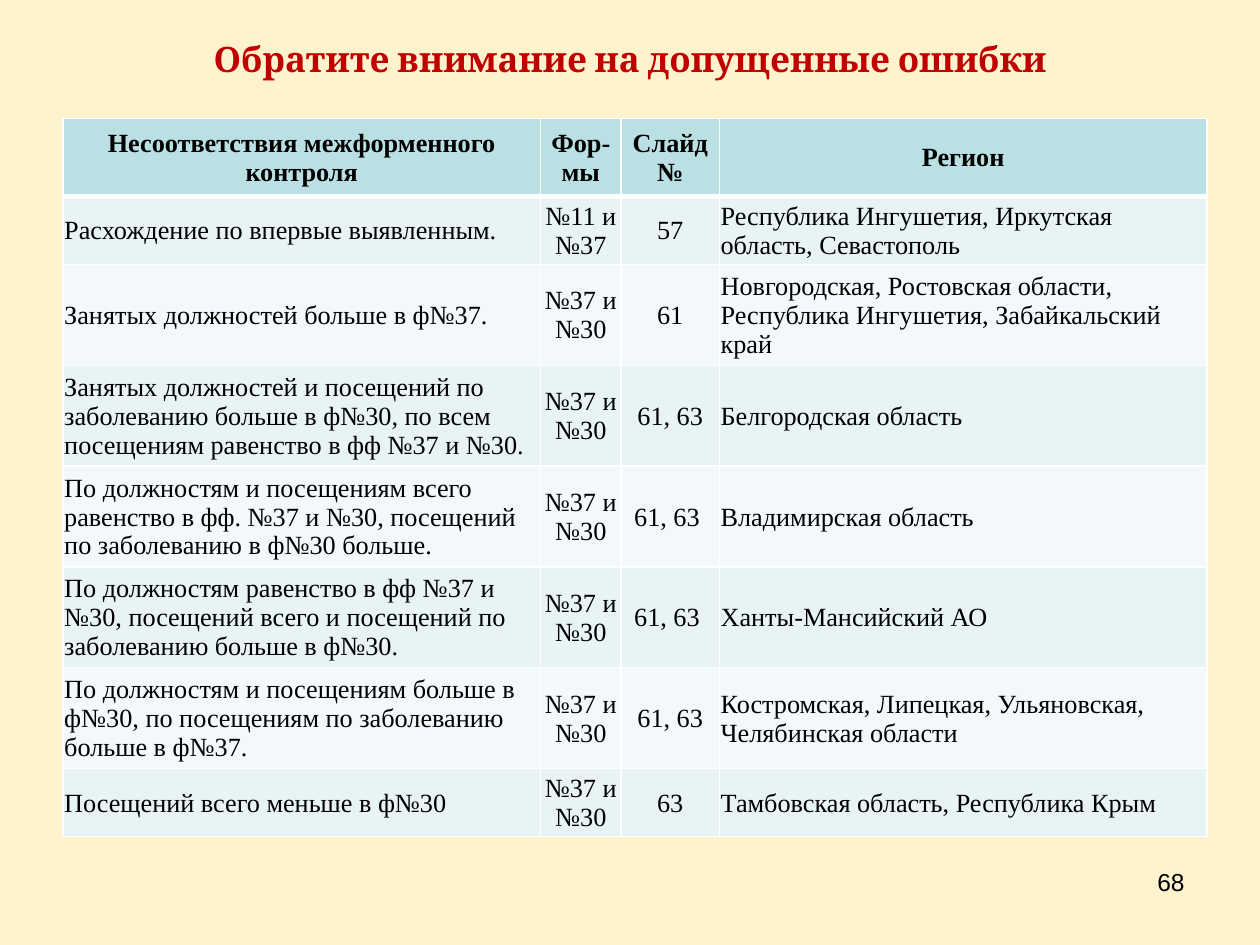
from dataclasses import dataclass

from lxml import etree
from pptx import Presentation
from pptx.dml.color import RGBColor
from pptx.enum.text import MSO_ANCHOR, PP_ALIGN
from pptx.oxml.ns import qn
from pptx.util import Inches, Pt

LEFT, CENTER, RIGHT = PP_ALIGN.LEFT, PP_ALIGN.CENTER, PP_ALIGN.RIGHT
MIDDLE = MSO_ANCHOR.MIDDLE


@dataclass(frozen=True)
class Theme:
    background: str = "FFF3CD"
    title: str = "C00000"
    text: str = "000000"
    header: str = "BBE0E3"
    bands: tuple = ("E7F3F4", "F3F9FA")
    border: str = "FFFFFF"
    title_size: int = 20
    table_size: int = 15
    number_size: int = 14
    title_font: str = "Cambria"
    table_font: str = "Times New Roman"
    number_font: str = "Arial"


THEME = Theme()


def write(frame, text, font, size, color, align, bold=False):
    para = frame.paragraphs[0]
    para.alignment = align
    span = para.add_run()
    span.text = text
    span.font.name = font
    span.font.size = Pt(size)
    span.font.bold = bold
    span.font.color.rgb = RGBColor.from_string(color)


def set_borders(cell, color, bottom_width):
    properties = cell._tc.get_or_add_tcPr()
    widths = {"a:lnL": 1, "a:lnR": 1, "a:lnT": 1, "a:lnB": bottom_width}
    for position, (tag, width) in enumerate(widths.items()):
        line = etree.Element(qn(tag), w=str(Pt(width)))
        fill = etree.SubElement(line, qn("a:solidFill"))
        etree.SubElement(fill, qn("a:srgbClr"), val=color)
        properties.insert(position, line)


# Slide and background
deck = Presentation()
deck.slide_width, deck.slide_height = Inches(10), Inches(7.5)
page = deck.slides.add_slide(deck.slide_layouts[5])
page.background.fill.solid()
page.background.fill.fore_color.rgb = RGBColor.from_string(THEME.background)

# Title
title = page.shapes.title
title.left, title.top = Inches(0.5), Inches(0.23)
title.width, title.height = Inches(9), Inches(0.47)
title.text_frame.vertical_anchor = MIDDLE
write(title.text_frame, "Обратите внимание на допущенные ошибки",
      THEME.title_font, THEME.title_size, THEME.title, CENTER, bold=True)

# Table of inconsistencies
ROWS = [
    ("Несоответствия межформенного контроля", "Фор-мы", "Слайд №", "Регион"),
    ("Расхождение по впервые выявленным.", "№11 и №37", "57",
     "Республика Ингушетия, Иркутская область, Севастополь"),
    ("Занятых должностей больше в ф№37.", "№37 и №30", "61",
     "Новгородская, Ростовская области, Республика Ингушетия, Забайкальский край"),
    ("Занятых должностей и посещений по заболеванию больше в ф№30, "
     "по всем посещениям равенство в фф №37 и №30.", "№37 и №30", "61, 63",
     "Белгородская область"),
    ("По должностям и посещениям всего равенство в фф. №37 и №30, "
     "посещений по заболеванию в ф№30 больше.", "№37 и №30", "61, 63 ",
     "Владимирская область"),
    ("По должностям равенство в фф №37 и №30, посещений всего "
     "и посещений по заболеванию больше в ф№30.", "№37 и №30", "61, 63 ",
     "Ханты-Мансийский АО"),
    ("По должностям и посещениям больше в ф№30, "
     "по посещениям по заболеванию больше в ф№37.", "№37 и №30", "61, 63",
     "Костромская, Липецкая, Ульяновская, Челябинская области"),
    ("Посещений всего меньше в ф№30", "№37 и №30", "63",
     "Тамбовская область, Республика Крым"),
]
COLUMN_WIDTHS = [3.79, 0.64, 0.78, 3.87]
ROW_HEIGHTS = [0.62, 0.54] + [0.8] * 5 + [0.54]
COLUMN_ALIGNS = [LEFT, CENTER, CENTER, LEFT]

table = page.shapes.add_table(
    len(ROWS), len(COLUMN_WIDTHS), Inches(0.5), Inches(0.94),
    Inches(sum(COLUMN_WIDTHS)), Inches(sum(ROW_HEIGHTS))).table
for column, width in zip(table.columns, COLUMN_WIDTHS):
    column.width = Inches(width)

for row_index, (texts, height) in enumerate(zip(ROWS, ROW_HEIGHTS)):
    table.rows[row_index].height = Inches(height)
    is_header = row_index == 0
    fill = THEME.header if is_header else THEME.bands[(row_index - 1) % 2]
    for column_index, text in enumerate(texts):
        cell = table.cell(row_index, column_index)
        cell.vertical_anchor = MIDDLE
        cell.margin_left = cell.margin_right = cell.margin_top = Inches(0.01)
        cell.margin_bottom = 0
        cell.fill.solid()
        cell.fill.fore_color.rgb = RGBColor.from_string(fill)
        set_borders(cell, THEME.border, 3 if is_header else 1)
        align = CENTER if is_header else COLUMN_ALIGNS[column_index]
        write(cell.text_frame, text, THEME.table_font, THEME.table_size,
              THEME.text, align, bold=is_header)

# Slide number
number_box = page.shapes.add_textbox(Inches(7.17), Inches(6.83), Inches(2.33), Inches(0.52))
number_box.text_frame.word_wrap = True
write(number_box.text_frame, "68", THEME.number_font, THEME.number_size, THEME.text, RIGHT)

deck.save("out.pptx")
